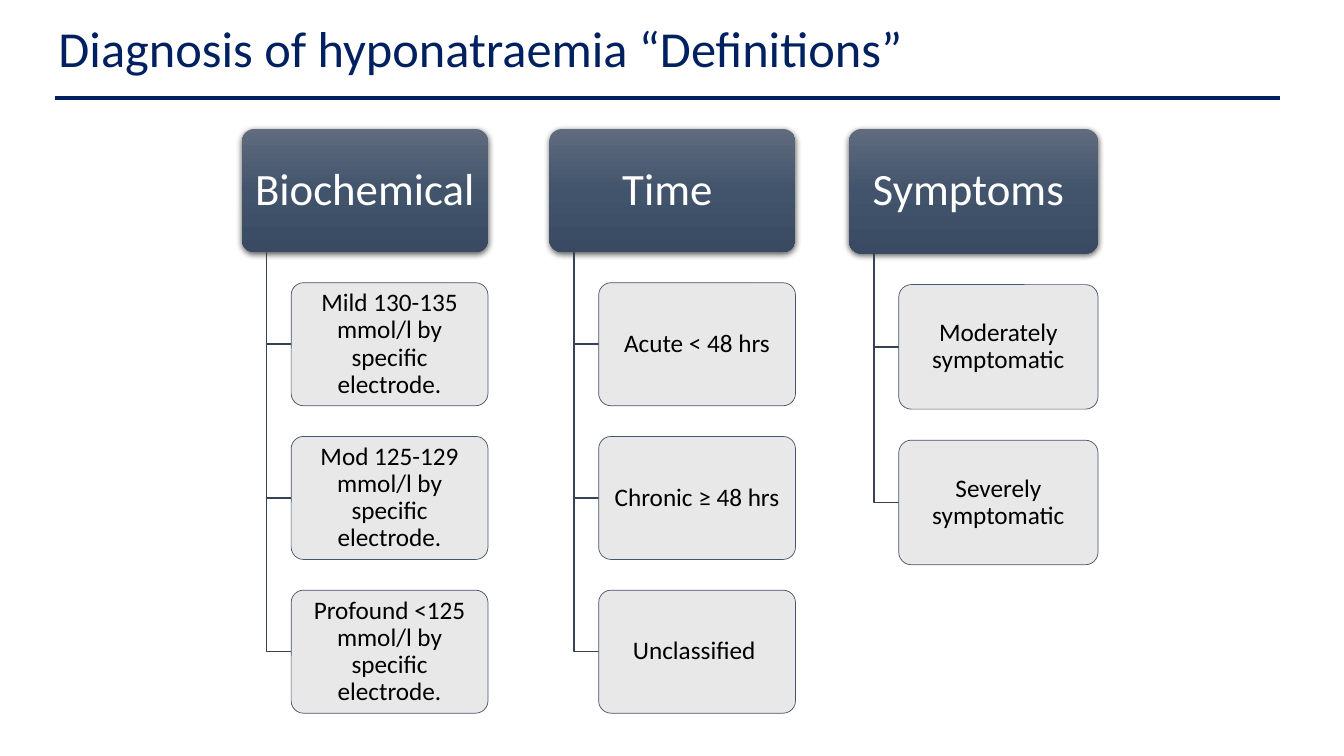
from dataclasses import dataclass

from lxml.etree import SubElement
from pptx import Presentation
from pptx.dml.color import RGBColor
from pptx.enum.shapes import MSO_CONNECTOR as Connector, MSO_SHAPE as Shape
from pptx.enum.text import MSO_ANCHOR as Anchor, MSO_AUTO_SIZE as AutoSize, PP_ALIGN as Align
from pptx.oxml import parse_xml
from pptx.oxml.ns import nsdecls, qn
from pptx.util import Inches, Pt


@dataclass(frozen=True)
class Theme:
    font: str = "Calibri"
    navy: str = "002060"
    header_top: str = "606B7D"
    header_middle: str = "42546C"
    header_bottom: str = "394A62"
    header_text: str = "FFFFFF"
    item_fill: str = "E7E6E6"
    item_line: str = "44546A"
    item_text: str = "000000"
    branch: str = "364355"
    title_size: int = 36
    header_size: int = 32
    item_size: int = 18


THEME = Theme()

COLUMNS = [
    (2.4, 2.44, "Biochemical ", [
        "Mild 130-135 mmol/l by specific electrode.",
        "Mod 125-129 mmol/l by specific electrode.",
        "Profound <125 mmol/l by specific electrode.",
    ]),
    (5.45, 2.44, "Time ", ["Acute < 48 hrs", "Chronic ≥ 48 hrs", "Unclassified "]),
    (8.42, 2.47, "Symptoms ", ["Moderately symptomatic", "Severely symptomatic"]),
]
COLUMNS_TOP = 1.28


def color(code):
    return RGBColor.from_string(code)


def format_paragraph(paragraph, size, code, align):
    paragraph.alignment = align
    for run in paragraph.runs:
        run.font.name = THEME.font
        run.font.size = Pt(size)
        run.font.color.rgb = color(code)


def add_title(slide, left, top, width, height, text):
    title = slide.shapes.title
    title.left, title.top = Inches(left), Inches(top)
    title.width, title.height = Inches(width), Inches(height)
    frame = title.text_frame
    frame.text = text
    frame.word_wrap = True
    frame.auto_size = AutoSize.NONE
    frame.vertical_anchor = Anchor.TOP
    format_paragraph(frame.paragraphs[0], THEME.title_size, THEME.navy, Align.LEFT)

    rule_y = Inches(top + 0.85)
    rule = slide.shapes.add_connector(
        Connector.STRAIGHT, Inches(left + 0.07), rule_y, Inches(left + 12.22), rule_y)
    rule.line.color.rgb = color(THEME.navy)
    rule.line.width = Pt(3)
    SubElement(rule._element.spPr, qn("a:effectLst"))


def add_box(slide, left, top, width, height, text, size, code, insets):
    box = slide.shapes.add_shape(
        Shape.ROUNDED_RECTANGLE, Inches(left), Inches(top), Inches(width), Inches(height))
    box.adjustments[0] = 0.1
    box.shadow.inherit = False
    frame = box.text_frame
    frame.text = text
    frame.word_wrap = True
    frame.vertical_anchor = Anchor.MIDDLE
    frame.margin_left = frame.margin_right = Inches(insets[0])
    frame.margin_top = frame.margin_bottom = Inches(insets[1])
    paragraph = frame.paragraphs[0]
    paragraph.line_spacing = 0.9
    format_paragraph(paragraph, size, code, Align.CENTER)
    return box


def add_header(slide, left, top, width, height, text):
    header = add_box(slide, left, top, width, height, text,
                     THEME.header_size, THEME.header_text, (0.06, 0.04))
    header.line.fill.background()
    header.fill.gradient()
    header.fill.gradient_angle = 270
    first, last = header.fill.gradient_stops
    first.color.rgb, first.position = color(THEME.header_top), 0
    last.color.rgb, last.position = color(THEME.header_bottom), 1
    properties = header._element.spPr
    properties.find(".//" + qn("a:gsLst")).insert(1, parse_xml(
        f'<a:gs {nsdecls("a")} pos="50000"><a:srgbClr val="{THEME.header_middle}"/></a:gs>'))
    properties.find(qn("a:effectLst")).append(parse_xml(
        f'<a:outerShdw {nsdecls("a")} blurRad="{Pt(4.5)}" dist="{Pt(1.5)}" dir="5400000"'
        ' algn="ctr" rotWithShape="0"><a:srgbClr val="000000">'
        '<a:alpha val="63000"/></a:srgbClr></a:outerShdw>'))


def add_item(slide, left, top, width, height, text):
    item = add_box(slide, left, top, width, height, text,
                   THEME.item_size, THEME.item_text, (0.04, 0.03))
    item.fill.solid()
    item.fill.fore_color.rgb = color(THEME.item_fill)
    fill_color = item._element.spPr.find(qn("a:solidFill")).find(qn("a:srgbClr"))
    SubElement(fill_color, qn("a:alpha")).set("val", "90000")
    item.line.color.rgb = color(THEME.item_line)
    item.line.width = Pt(0.5)


def add_branch(slide, left, top, width, height):
    x, y = Inches(left), Inches(top)
    bottom = Inches(top + height)
    builder = slide.shapes.build_freeform(x, y)
    builder.add_line_segments([(x, bottom), (Inches(left + width), bottom)], close=False)
    branch = builder.convert_to_shape()
    branch.shadow.inherit = False
    branch.fill.background()
    branch.line.color.rgb = color(THEME.branch)
    branch.line.width = Pt(1)


def add_column(slide, left, top, width, heading, items):
    height = width / 2
    step = height * 1.25
    indent = width / 10
    add_header(slide, left, top, width, height, heading)
    for row, text in enumerate(items, start=1):
        item_top = top + row * step
        add_branch(slide, left + indent, top + height, indent, row * step - height / 2)
        add_item(slide, left + 2 * indent, item_top, width - 2 * indent, height, text)


def main():
    presentation = Presentation()
    presentation.slide_width = Inches(13.33)
    presentation.slide_height = Inches(7.5)
    slide = presentation.slides.add_slide(presentation.slide_layouts[5])
    add_title(slide, 0.48, 0.12, 12.37, 0.71, "Diagnosis of hyponatraemia “Definitions”")
    for left, width, heading, items in COLUMNS:
        add_column(slide, left, COLUMNS_TOP, width, heading, items)
    presentation.save("out.pptx")


if __name__ == "__main__":
    main()
